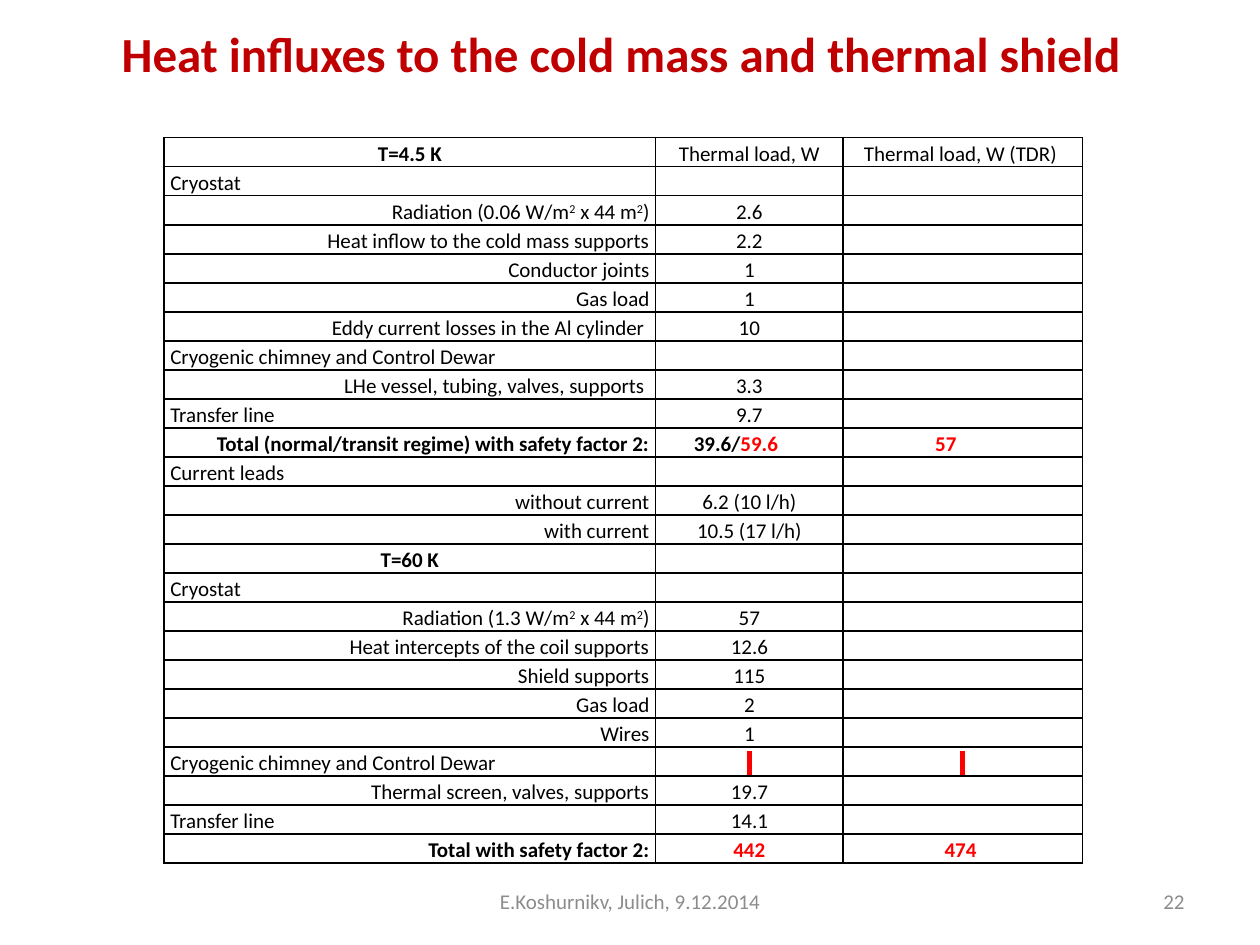
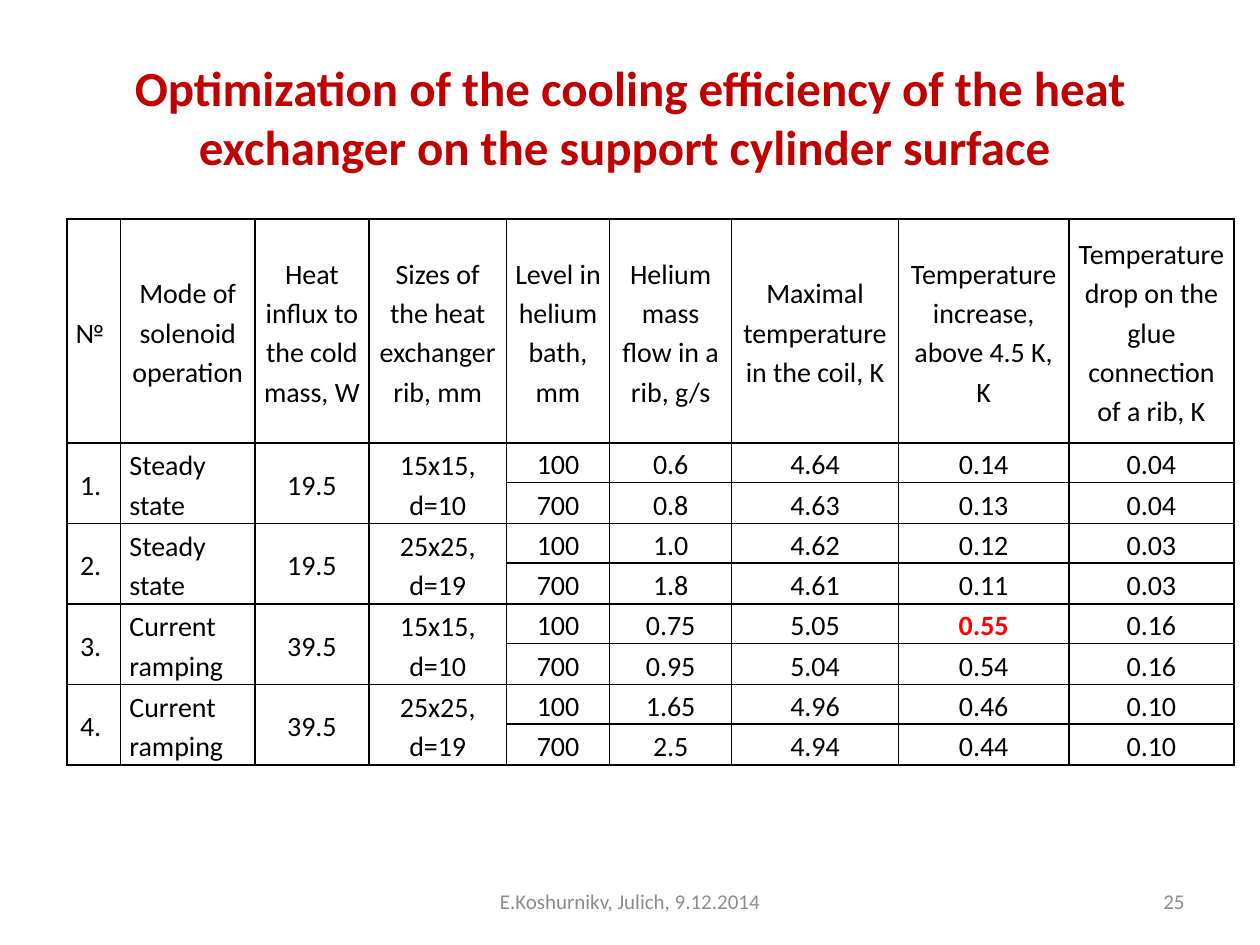
from lxml import etree
from pptx import Presentation
from pptx import util as u
from pptx.dml import color
from pptx.enum import text
from pptx.oxml import ns

Pt = u.Pt
FONT = "Calibri"
BLACK, WHITE, RED = "000000", "FFFFFF", "FF0000"
TITLE_RED, FOOTER_GREY = "C00000", "8C8C8C"
LEFT, CENTER = text.PP_ALIGN.LEFT, text.PP_ALIGN.CENTER
RIGHT, JUSTIFY = text.PP_ALIGN.RIGHT, text.PP_ALIGN.JUSTIFY
LINE_SPACING = 1.15

COLD_LEVELS = [
    ("T=4.5 K", "Thermal load, W", "Thermal load, W (TDR) "),
    ("Cryostat", "", ""),
    ("Radiation (0.06 W/m^2^ x 44 m^2^)", "2.6", ""),
    ("Heat inflow to the cold mass supports", "2.2", ""),
    ("Conductor joints", "1", ""),
    ("Gas load", "1", ""),
    ("Eddy current losses in the Al cylinder ", "10", ""),
    ("Cryogenic chimney and Control Dewar", "", ""),
    ("LHe vessel, tubing, valves, supports ", "3.3", ""),
    ("Transfer line", "9.7", ""),
    ("Total (normal/transit regime) with safety factor 2:", "39.6/|59.6", "|57"),
    ("Current leads", "", ""),
    ("without current", "6.2 (10 l/h)", ""),
    ("with current", "10.5 (17 l/h)", ""),
    ("T=60 K", "", ""),
    ("Cryostat", "", ""),
    ("Radiation (1.3 W/m^2^ x 44 m^2^)", "57", ""),
    ("Heat intercepts of the coil supports", "12.6", ""),
    ("Shield supports", "115", ""),
    ("Gas load", "2", ""),
    ("Wires", "1", ""),
    ("Cryogenic chimney and Control Dewar", "", ""),
    ("Thermal screen, valves, supports", "19.7", ""),
    ("Transfer line", "14.1", ""),
    ("Total with safety factor 2:", "|442", "|474 "),
]
SECTIONS = {"Cryostat", "Cryogenic chimney and Control Dewar", "Transfer line",
            "Current leads"}
MARKED_ROW = 21
TOTAL_ROW = 10

RIB_HEADINGS = [
    "№", "Mode of solenoid operation", "Heat influx to the cold mass, W",
    "Sizes of the heat exchanger rib, mm", "Level in helium bath, mm",
    "Helium mass flow in a rib, g/s", "Maximal temperature in the coil, K",
    "Temperature increase, above 4.5 K,\nK",
    "Temperature drop on the glue connection of a rib, K",
]
RIB_CASES = [
    (("Steady state", "19.5", "15x15, d=10"),
     ("100", "0.6", "4.64", "0.14", "0.04"), ("700", "0.8", "4.63", "0.13", "0.04")),
    (("Steady state", "19.5", "25x25, d=19"),
     ("100", "1.0", "4.62", "0.12", "0.03"), ("700", "1.8", "4.61", "0.11", "0.03")),
    (("Current ramping", "39.5", "15x15, d=10"),
     ("100", "0.75", "5.05", "|0.55", "0.16"), ("700", "0.95", "5.04", "0.54", "0.16")),
    (("Current ramping", "39.5", "25x25, d=19"),
     ("100", "1.65", "4.96", "0.46", "0.10"), ("700", "2.5", "4.94", "0.44", "0.10")),
]


def rgb(code):
    return color.RGBColor.from_string(code)


def style_run(run, size, ink, bold=False):
    run.font.name = FONT
    run.font.size = Pt(size)
    run.font.bold = bold
    run.font.color.rgb = rgb(ink)


def add_label(slide, box, words, size, ink, align, bold=False):
    frame = slide.shapes.add_textbox(*map(Pt, box)).text_frame
    frame.word_wrap = True
    frame.vertical_anchor = text.MSO_ANCHOR.MIDDLE
    frame.text = words
    frame.paragraphs[0].alignment = align
    style_run(frame.paragraphs[0].runs[0], size, ink, bold)


def add_frame_texts(slide, title, title_box, number):
    """Place the title, the footer and the slide number."""
    add_label(slide, title_box, title, 28, TITLE_RED, CENTER, True)
    add_label(slide, (246, 500.5, 228, 29), "E.Koshurnikv, Julich, 9.12.2014",
              12, FOOTER_GREY, CENTER)
    add_label(slide, (516, 500.5, 168, 29), number, 12, FOOTER_GREY, RIGHT)


def add_borders(cell):
    properties = cell._tc.get_or_add_tcPr()
    for side in ("lnL", "lnR", "lnT", "lnB"):
        line = etree.SubElement(properties, ns.qn(f"a:{side}"), w=str(Pt(1)))
        fill = etree.SubElement(line, ns.qn("a:solidFill"))
        etree.SubElement(fill, ns.qn("a:srgbClr"), val=BLACK)


def add_grid(slide, left, top, widths, heights, size, inset):
    """Add an empty white table with black rules and return it."""
    table = slide.shapes.add_table(
        len(heights), len(widths), Pt(left), Pt(top),
        Pt(sum(widths)), Pt(sum(heights))).table
    table.first_row = table.horz_banding = False
    for column, width in zip(table.columns, widths):
        column.width = Pt(width)
    for row, height in zip(table.rows, heights):
        row.height = Pt(height)
    for cell in table.iter_cells():
        add_borders(cell)
        cell.fill.solid()
        cell.fill.fore_color.rgb = rgb(WHITE)
        cell.margin_left = cell.margin_right = Pt(inset)
        cell.margin_top = cell.margin_bottom = 0
        cell.vertical_anchor = text.MSO_ANCHOR.MIDDLE
        etree.SubElement(cell.text_frame.paragraphs[0]._p,
                         ns.qn("a:endParaRPr"), sz=str(size * 100))
    return table


def fill_cell(cell, words, size, align, bold=False):
    """Write a cell: text after | is bold red, text between ^ is raised."""
    if not words:
        return
    cell.text_frame.text = words.replace("|", "").replace("^", "")
    for paragraph, line in zip(cell.text_frame.paragraphs, words.split("\n")):
        paragraph.alignment = align
        paragraph.line_spacing = LINE_SPACING
        if "|" not in line and "^" not in line:
            style_run(paragraph.runs[0], size, BLACK, bold)
            continue
        paragraph.text = ""
        plain, _, hot = line.partition("|")
        for index, piece in enumerate(plain.split("^")):
            if piece:
                run = paragraph.add_run()
                run.text = piece
                style_run(run, size, BLACK, bold)
                if index % 2:
                    run._r.get_or_add_rPr().set("baseline", "30000")
        if hot:
            run = paragraph.add_run()
            run.text = hot
            style_run(run, size, RED, True)


def mark_cell(cell, size):
    """Show a thin red bar: one highlighted space."""
    fill_cell(cell, "| ", size, CENTER)
    properties = cell.text_frame.paragraphs[0].runs[0]._r.get_or_add_rPr()
    highlight = etree.Element(ns.qn("a:highlight"))
    etree.SubElement(highlight, ns.qn("a:srgbClr"), val=RED)
    properties.find(ns.qn("a:solidFill")).addnext(highlight)


def add_heat_table(slide, left, top):
    size = 12
    table = add_grid(slide, left, top, (281, 107, 137), [16] * len(COLD_LEVELS),
                     size, 3.6)
    for row, (source, load, design_load) in enumerate(COLD_LEVELS):
        is_level, is_total = source.startswith("T="), source.startswith("Total")
        align = CENTER if is_level else JUSTIFY if source in SECTIONS else RIGHT
        fill_cell(table.cell(row, 0), source, size, align, is_level or is_total)
        fill_cell(table.cell(row, 1), load, size, CENTER, is_total)
        fill_cell(table.cell(row, 2), design_load, size, CENTER, is_total)
    for column, shift in ((1, 19), (2, 23)):
        table.cell(TOTAL_ROW, column).margin_right = Pt(shift)
        mark_cell(table.cell(MARKED_ROW, column), size)


def add_rib_table(slide, left, top):
    size = 16
    widths = (30.7, 76.6, 65.3, 78.5, 59, 69.8, 95.2, 97.5, 94.3)
    table = add_grid(slide, left, top, widths, [128] + [22.6, 23.4] * len(RIB_CASES),
                     size, 5)
    for column, heading in enumerate(RIB_HEADINGS):
        fill_cell(table.cell(0, column), heading, size, CENTER if column else LEFT)
    for number, (shared, *levels) in enumerate(RIB_CASES, 1):
        first = 2 * number - 1
        for column, words in enumerate((f"{number}. ", *shared)):
            cell = table.cell(first, column)
            cell.merge(table.cell(first + 1, column))
            fill_cell(cell, words, size, LEFT if column == 1 else CENTER)
        for row, values in enumerate(levels, first):
            for column, words in enumerate(values, 1 + len(shared)):
                fill_cell(table.cell(row, column), words, size, CENTER)


def build_heat_slide(slide):
    add_frame_texts(slide, "Heat influxes to the cold mass and thermal shield ",
                    (34, 0, 648, 61), "22")
    add_heat_table(slide, 93.7, 78.7)


def build_rib_slide(slide):
    add_frame_texts(slide, "Optimization of the cooling efficiency of the heat "
                    "exchanger on the support cylinder surface ",
                    (36, 21.6, 648, 90), "25")
    add_rib_table(slide, 38.3, 125.2)


def main():
    deck = Presentation()
    deck.slide_width, deck.slide_height = Pt(720), Pt(540)
    for build in (build_heat_slide, build_rib_slide):
        build(deck.slides.add_slide(deck.slide_layouts[6]))
    deck.save("out.pptx")


if __name__ == "__main__":
    main()
